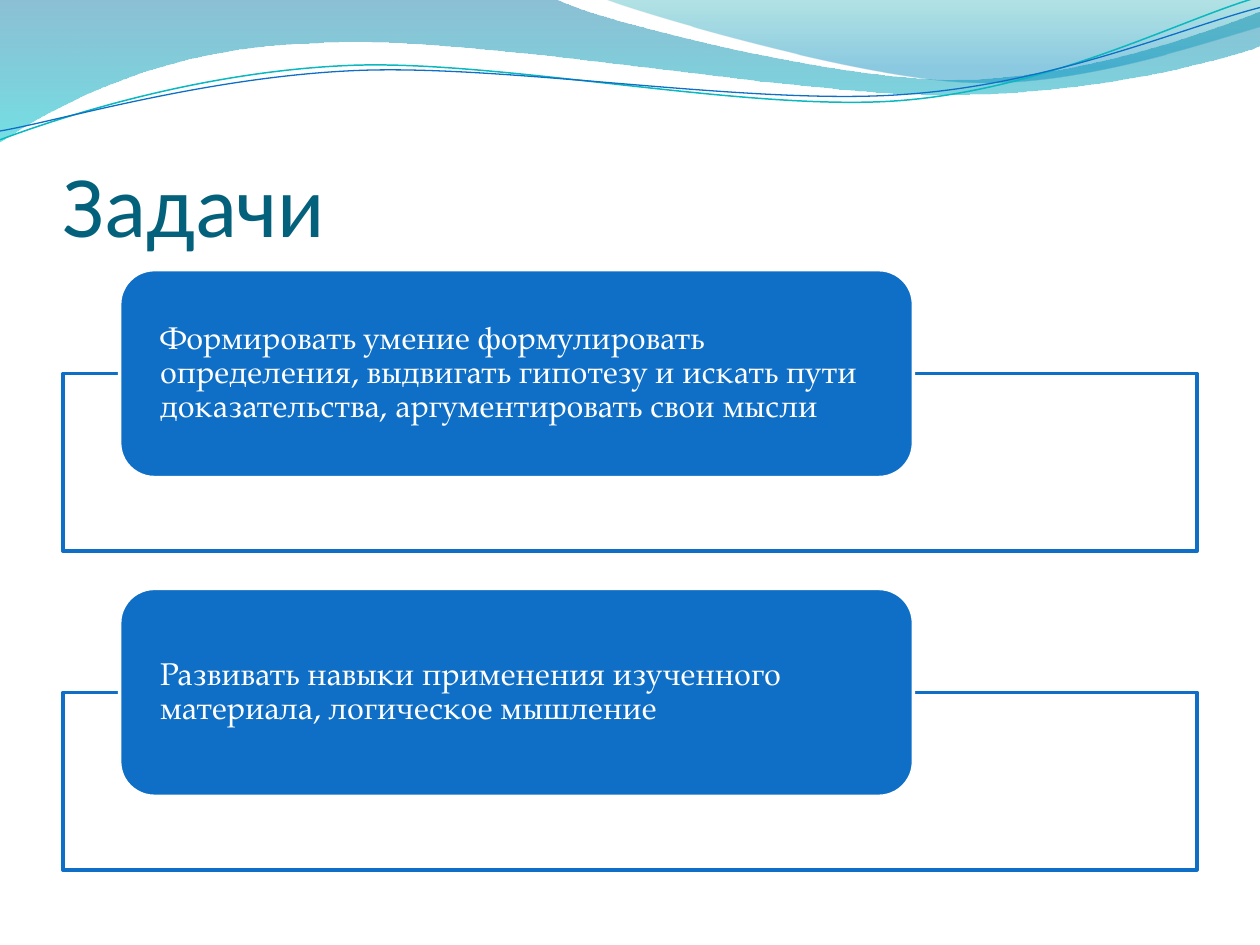
from lxml.etree import SubElement
from pptx import Presentation
from pptx.dml.color import RGBColor
from pptx.enum.shapes import MSO_SHAPE
from pptx.enum.text import MSO_ANCHOR, PP_ALIGN
from pptx.oxml.ns import qn
from pptx.util import Inches, Pt

COLORS = {
    "blue": "0F6FC6", "teal": "0AB8BF", "title": "04617B", "white": "FFFFFF",
    "wave_top": "0074A1", "wave_bottom": "00C6CF",
    "crest_top": "00A1A9", "crest_bottom": "008BBF",
}
TASKS = [
    "Формировать умение формулировать определения, выдвигать гипотезу и "
    "искать пути доказательства, аргументировать свои мысли",
    "Развивать навыки применения изученного материала, логическое мышление",
]

# Each outline is a start point, then line ends (x, y) or
# Bezier curves (two control points and the end), in inches.
WAVE = [(0, 0), (4.4, -0.01), (4.76, 0.17, 6.64, 0.63, 7.58, 0.63),
        (8.53, 0.63, 9.58, 0.26, 10, 0.09), (10.01, 0.36),
        (9.83, 0.44, 8.7, 0.76, 7.46, 0.75), (6.22, 0.75, 3.82, 0.28, 2.57, 0.34),
        (1.29, 0.36, 0.46, 0.83, -0.01, 1.13)]
CREST = [(4.79, -0.01), (5.09, 0.11, 6.82, 0.62, 7.69, 0.65),
         (8.56, 0.69, 9.61, 0.32, 10, 0.21), (10, 0)]
TEAL_LINE = [(0, 1.11), (0.48, 0.93, 1.58, 0.57, 2.77, 0.52),
             (3.95, 0.47, 5.93, 0.89, 7.13, 0.8), (8.33, 0.71, 9.38, 0.15, 9.98, -0.02)]
BLUE_LINE = [(0, 1.04), (0.47, 0.96, 1.64, 0.61, 2.83, 0.56),
             (4.03, 0.51, 5.97, 0.84, 7.17, 0.75), (8.36, 0.67, 9.41, 0.21, 10, 0.06)]


def rgb(name):
    return RGBColor.from_string(COLORS[name])


def set_alpha(color_el, percent):
    SubElement(color_el, qn("a:alpha")).set("val", str(percent * 1000))


def add_curve(s, left, top, outline, closed):
    """Freeform whose segments are lines or true Bezier curves."""
    def point(x, y):
        return left + Inches(x), top + Inches(y)

    start, *segments = outline
    builder = s.shapes.build_freeform(*point(*start))
    builder.add_line_segments([point(*seg[-2:]) for seg in segments], close=closed)
    sp = builder.convert_to_shape()
    sp.shadow.inherit = False
    for line_el, seg in zip(sp._element.xpath(".//a:lnTo"), segments):
        if len(seg) == 2:
            continue
        line_el.tag = qn("a:cubicBezTo")
        for child in list(line_el):
            line_el.remove(child)
        for i in range(0, 6, 2):
            x, y = point(*seg[i:i + 2])
            pt = SubElement(line_el, qn("a:pt"))
            pt.set("x", str(x - sp.left))
            pt.set("y", str(y - sp.top))
    return sp


def add_gradient_wave(s, left, top, outline, stops):
    sp = add_curve(s, left, top, outline, True)
    sp.line.fill.background()
    sp.fill.gradient()
    sp.fill.gradient_angle = 270
    for stop, (position, color, alpha) in zip(sp.fill.gradient_stops, stops):
        stop.position = position
        stop.color.rgb = rgb(color)
    for el, (_, _, alpha) in zip(sp._element.xpath("./p:spPr/a:gradFill//a:srgbClr"), stops):
        set_alpha(el, alpha)


def add_wave_header(s, left, top):
    add_gradient_wave(s, left, top, WAVE,
                      [(0, "wave_top", 45), (1, "wave_bottom", 55)])
    add_gradient_wave(s, left, top, CREST,
                      [(0, "crest_top", 30), (0.8, "crest_bottom", 45)])
    for outline, color, width in ((TEAL_LINE, "teal", 0.85), (BLUE_LINE, "blue", 0.75)):
        sp = add_curve(s, left, top, outline, False)
        sp.fill.background()
        sp.line.color.rgb = rgb(color)
        sp.line.width = Pt(width)


def write_text(sp, text, font, size, color, anchor, margins):
    tf = sp.text_frame
    tf.word_wrap = True
    tf.vertical_anchor = anchor
    tf.margin_left, tf.margin_top, tf.margin_right, tf.margin_bottom = map(Inches, margins)
    p = tf.paragraphs[0]
    p.alignment = PP_ALIGN.LEFT
    r = p.add_run()
    r.text = text
    r.font.name = font
    r.font.size = Pt(size)
    r.font.color.rgb = rgb(color)
    return p


def add_title(s, left, top, width, height, text):
    sp = s.shapes.add_textbox(left, top, width, height)
    write_text(sp, text, "Calibri", 50, "title", MSO_ANCHOR.BOTTOM, (0, 0.05, 0, 0))


def add_box(s, kind, left, top, width, height, fill, line):
    sp = s.shapes.add_shape(kind, left, top, width, height)
    sp.shadow.inherit = False
    sp.fill.solid()
    sp.fill.fore_color.rgb = rgb(fill)
    sp.line.color.rgb = rgb(line)
    sp.line.width = Pt(2)
    return sp


def add_task(s, left, top, width, text):
    """Outlined frame with a rounded label over its top edge."""
    label_h = Inches(1.65)
    frame = add_box(s, MSO_SHAPE.RECTANGLE, left, top + label_h // 2, width,
                    Inches(1.41), "white", "blue")
    set_alpha(frame._element.xpath("./p:spPr/a:solidFill/a:srgbClr")[0], 90)
    label = add_box(s, MSO_SHAPE.ROUNDED_RECTANGLE, left + Inches(0.45), top,
                    int(width * 0.7), label_h, "blue", "white")
    p = write_text(label, text, "TeX Gyre Pagella", 18, "white",
                   MSO_ANCHOR.MIDDLE, (0.24, 0, 0.24, 0))
    p.line_spacing = 0.9


def main():
    prs = Presentation()
    prs.slide_width, prs.slide_height = Inches(10), Inches(7.5)
    s = prs.slides.add_slide(prs.slide_layouts[6])
    left, width = Inches(0.5), Inches(9)
    add_wave_header(s, 0, 0)
    add_title(s, left, Inches(0.77), width, Inches(1.25), "Задачи")
    for i, text in enumerate(TASKS):
        add_task(s, left, Inches(2.14 + 2.53 * i), width, text)
    prs.save("out.pptx")


if __name__ == "__main__":
    main()
